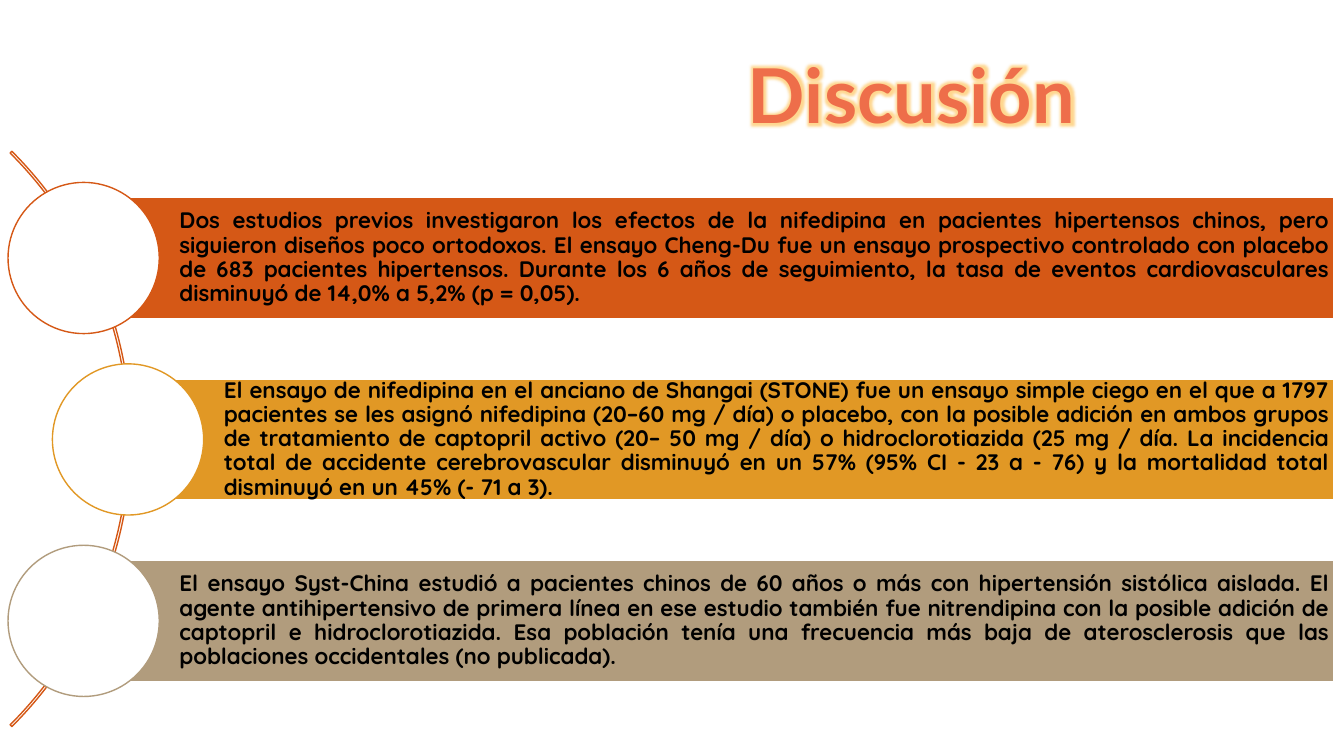
from dataclasses import dataclass

from lxml import etree
from pptx import Presentation
from pptx.dml.color import RGBColor
from pptx.enum import shapes, text
from pptx.oxml import ns
from pptx.util import Inches, Pt


@dataclass(frozen=True)
class Theme:
    """Colours, fonts and type sizes of the slide."""
    title: str = "EE6E4A"
    glow: str = "FFBD47"
    paper: str = "FFFFFF"
    ink: str = "000000"
    arc: str = "D55816"
    title_font: str = "Lato"
    body_font: str = "Quicksand"
    title_size: int = 54
    body_size: int = 16


THEME = Theme()
BAR_RIGHT, BAR_HEIGHT, BAR_TOP, BAR_PITCH = 13.23, 1.2, 1.96, 1.8
CIRCLE = 1.5

STUDIES = [
    (0.83, "D55816",
     "Dos estudios previos investigaron los efectos de la nifedipina en pacientes "
     "hipertensos chinos, pero siguieron diseños poco ortodoxos. El ensayo Cheng-Du "
     "fue un ensayo prospectivo controlado con placebo de 683 pacientes hipertensos. "
     "Durante los 6 años de seguimiento, la tasa de eventos cardiovasculares "
     "disminuyó de 14,0% a 5,2% (p = 0,05)."),
    (1.27, "E19825",
     "El ensayo de nifedipina en el anciano de Shangai (STONE) fue un ensayo simple "
     "ciego en el que a 1797 pacientes se les asignó nifedipina (20–60 mg / día) o "
     "placebo, con la posible adición en ambos grupos de tratamiento de captopril "
     "activo (20– 50 mg / día) o hidroclorotiazida (25 mg / día. La incidencia total "
     "de accidente cerebrovascular disminuyó en un 57% (95% CI - 23 a - 76) y la "
     "mortalidad total disminuyó en un 45% (- 71 a 3)."),
    (0.83, "B19C7D",
     "El ensayo Syst-China estudió a pacientes chinos de 60 años o más con "
     "hipertensión sistólica aislada. El agente antihipertensivo de primera línea en "
     "ese estudio también fue nitrendipina con la posible adición de captopril e "
     "hidroclorotiazida. Esa población tenía una frecuencia más baja de "
     "aterosclerosis que las poblaciones occidentales (no publicada)."),
]


def add_outlined(slide, preset, box, line, fill=None):
    """Add a preset shape with a one-point outline and an optional fill."""
    shape = slide.shapes.add_shape(preset, *map(Inches, box))
    shape.shadow.inherit = False
    shape.line.color.rgb = RGBColor.from_string(line)
    shape.line.width = Pt(1)
    if fill:
        shape.fill.solid()
        shape.fill.fore_color.rgb = RGBColor.from_string(fill)
    else:
        shape.fill.background()
    return shape


def write(frame, wording, font_name, size, color, align):
    """Write one bold paragraph, centred vertically, and return it."""
    frame.word_wrap = True
    frame.vertical_anchor = text.MSO_ANCHOR.MIDDLE
    paragraph = frame.paragraphs[0]
    paragraph.text = wording
    paragraph.alignment = align
    font = paragraph.font
    font.name, font.size, font.bold = font_name, Pt(size), True
    font.color.rgb = RGBColor.from_string(color)
    return paragraph


def add_glow(run, color):
    """Put a soft coloured glow around the letters of a run."""
    effects = etree.SubElement(run._r.get_or_add_rPr(), ns.qn("a:effectLst"))
    glow = etree.SubElement(effects, ns.qn("a:glow"), rad=str(Pt(8)))
    tint = etree.SubElement(glow, ns.qn("a:srgbClr"), val=color)
    etree.SubElement(tint, ns.qn("a:alpha"), val="60000")


def add_title(slide, wording):
    """Add the glowing slide title."""
    title = slide.shapes.add_textbox(*map(Inches, (4.77, 0.49, 8.54, 0.87)))
    heading = write(title.text_frame, wording, THEME.title_font, THEME.title_size,
                    THEME.title, text.PP_ALIGN.CENTER)
    add_glow(heading.runs[0], THEME.glow)


def add_arc(slide):
    """Add the thin arc that links the circles."""
    arc = add_outlined(slide, shapes.MSO_SHAPE.BLOCK_ARC,
                       (-6.77, 0.32, 8.07, 8.07), THEME.arc)
    for index, value in enumerate((189, 27, 0.003)):
        arc.adjustments[index] = value


def add_study(slide, left, top, color, summary):
    """Add a coloured bar with its summary and the circle on its left end."""
    bar = add_outlined(slide, shapes.MSO_SHAPE.RECTANGLE,
                       (left, top, BAR_RIGHT - left, BAR_HEIGHT), THEME.paper, color)
    frame = bar.text_frame
    frame.margin_left = Inches(0.95)
    frame.margin_top = frame.margin_right = frame.margin_bottom = Inches(0.04)
    paragraph = write(frame, summary, THEME.body_font, THEME.body_size,
                      THEME.ink, text.PP_ALIGN.JUSTIFY)
    paragraph.line_spacing = 0.9
    circle_top = top + (BAR_HEIGHT - CIRCLE) / 2
    add_outlined(slide, shapes.MSO_SHAPE.OVAL,
                 (left - CIRCLE / 2, circle_top, CIRCLE, CIRCLE), color, THEME.paper)


def main():
    """Build the discussion slide and save it."""
    deck = Presentation()
    deck.slide_width, deck.slide_height = Inches(13.33), Inches(7.5)
    slide = deck.slides.add_slide(deck.slide_layouts[6])
    add_title(slide, "Discusión")
    add_arc(slide)
    for row, (left, color, summary) in enumerate(STUDIES):
        add_study(slide, left, BAR_TOP + row * BAR_PITCH, color, summary)
    deck.save("out.pptx")


if __name__ == "__main__":
    main()
